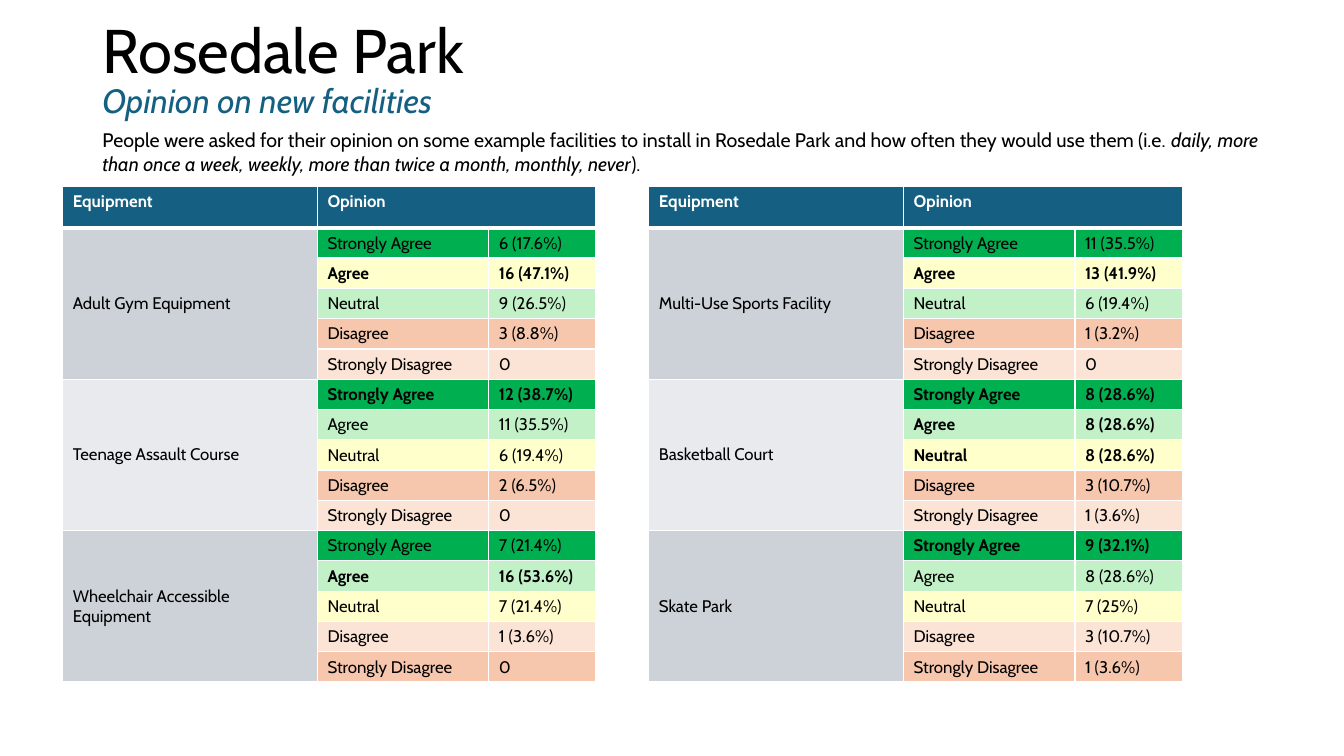
from lxml import etree
from pptx import Presentation
from pptx import util as u
from pptx.dml.color import RGBColor
from pptx.enum import text
from pptx.oxml import ns

FONT = "Cabin"
BLACK = RGBColor(0x00, 0x00, 0x00)
WHITE = RGBColor(0xFF, 0xFF, 0xFF)
BLUE = RGBColor(0x15, 0x60, 0x82)
GREY = RGBColor(0xCC, 0xD2, 0xD8)
PALE = RGBColor(0xE8, 0xEA, 0xED)
GREEN = RGBColor(0x00, 0xB0, 0x50)
MINT = RGBColor(0xC2, 0xF1, 0xC8)
CREAM = RGBColor(0xFF, 0xFF, 0xCC)
PEACH = RGBColor(0xF6, 0xC6, 0xAD)
BLUSH = RGBColor(0xFB, 0xE3, 0xD6)

LEVELS = ["Strongly Agree", "Agree", "Neutral", "Disagree", "Strongly Disagree"]
BANDS = [
    (GREY, [GREEN, CREAM, MINT, PEACH, BLUSH]),
    (PALE, [GREEN, MINT, CREAM, PEACH, BLUSH]),
    (GREY, [GREEN, MINT, CREAM, BLUSH, PEACH]),
]
LEFT = [
    ("Adult Gym Equipment",
     ["6 (17.6%)", "16 (47.1%)", "9 (26.5%)", "3 (8.8%)", "0"]),
    ("Teenage Assault Course",
     ["12 (38.7%)", "11 (35.5%)", "6 (19.4%)", "2 (6.5%)", "0"]),
    ("Wheelchair Accessible Equipment",
     ["7 (21.4%)", "16 (53.6%)", "7 (21.4%)", "1 (3.6%)", "0"]),
]
RIGHT = [
    ("Multi-Use Sports Facility",
     ["11 (35.5%)", "13 (41.9%)", "6 (19.4%)", "1 (3.2%)", "0"]),
    ("Basketball Court",
     ["8 (28.6%)", "8 (28.6%)", "8 (28.6%)", "3 (10.7%)", "1 (3.6%)"]),
    ("Skate Park",
     ["9 (32.1%)", "8 (28.6%)", "7 (25%)", "3 (10.7%)", "1 (3.6%)"]),
]
INTRO = [
    ("People were asked for their opinion on some example facilities to install "
     "in Rosedale Park and how often they would use them (i.e. ", False),
    ("daily, more than once a week, weekly, more than twice a month, monthly, "
     "never", True),
    (").", False),
]
WIDTHS = [6.42, 4.32, 2.7]
HEAD = 1.04
ROW = 0.76


def style(run, size, color, bold=False, italic=False):
    font = run.font
    font.name = FONT
    font.size = u.Pt(size)
    font.color.rgb = color
    font.bold = bold
    font.italic = italic


def add_text(slide, box, parts, size, color=BLACK):
    frame = slide.shapes.add_textbox(*[u.Cm(n) for n in box]).text_frame
    frame.word_wrap = True
    para = frame.paragraphs[0]
    for words, italic in parts:
        run = para.add_run()
        run.text = words
        style(run, size, color, italic=italic)
    return frame


def add_edge(cell, side, width):
    props = cell._tc.get_or_add_tcPr()
    line = etree.SubElement(props, ns.qn("a:ln" + side), w=str(u.Pt(width)))
    fill = etree.SubElement(line, ns.qn("a:solidFill"))
    etree.SubElement(fill, ns.qn("a:srgbClr"), val=str(WHITE))


def paint(table, row, col, fill):
    cell = table.cell(row, col)
    for side in "LRTB":
        thick = (row, side) in [(0, "B"), (1, "T")]
        add_edge(cell, side, 3 if thick else 1)
    cell.fill.solid()
    cell.fill.fore_color.rgb = fill


def write(table, row, col, words, color=BLACK, bold=False):
    cell = table.cell(row, col)
    cell.text_frame.text = words
    style(cell.text_frame.paragraphs[0].runs[0], 12, color, bold)
    return cell


def count(answer):
    return int(answer.split()[0])


def add_group(table, top, name, answers, band):
    shade, fills = band
    best = max(map(count, answers))
    for step, (level, answer, fill) in enumerate(zip(LEVELS, answers, fills)):
        row = top + step
        bold = count(answer) == best
        for col, tint in enumerate([shade, fill, fill]):
            paint(table, row, col, tint)
        write(table, row, 1, level, bold=bold)
        write(table, row, 2, answer, bold=bold)
    cell = write(table, top, 0, name)
    cell.vertical_anchor = text.MSO_ANCHOR.MIDDLE
    cell.merge(table.cell(top + len(LEVELS) - 1, 0))


def add_survey(slide, left, groups):
    rows = len(groups) * len(LEVELS)
    frame = slide.shapes.add_table(
        rows + 1, len(WIDTHS), u.Cm(left), u.Cm(4.7),
        u.Cm(sum(WIDTHS)), u.Cm(HEAD + rows * ROW))
    table = frame.table
    table.horz_banding = False
    for col, width in enumerate(WIDTHS):
        table.columns[col].width = u.Cm(width)
        paint(table, 0, col, BLUE)
    for row, line in enumerate(table.rows):
        line.height = u.Cm(ROW if row else HEAD)
    write(table, 0, 0, "Equipment", WHITE, True)
    write(table, 0, 1, "Opinion", WHITE, True).merge(table.cell(0, 2))
    for pos, ((name, answers), band) in enumerate(zip(groups, BANDS)):
        add_group(table, 1 + pos * len(LEVELS), name, answers, band)


def main():
    deck = Presentation()
    deck.slide_width = u.Cm(33.87)
    deck.slide_height = u.Cm(19.05)
    slide = deck.slides.add_slide(deck.slide_layouts[6])
    title = add_text(slide, (2.33, -0.48, 29.21, 3.68),
                     [("Rosedale Park", False)], 44)
    title.vertical_anchor = text.MSO_ANCHOR.MIDDLE
    title.paragraphs[0].line_spacing = 0.9
    add_text(slide, (2.33, 1.88, 13.92, 1.28),
             [("Opinion on new facilities", True)], 24, BLUE)
    add_text(slide, (2.33, 3.1, 30.05, 1.45), INTRO, 14)
    add_survey(slide, 1.58, LEFT)
    add_survey(slide, 16.35, RIGHT)
    deck.save("out.pptx")


if __name__ == "__main__":
    main()
